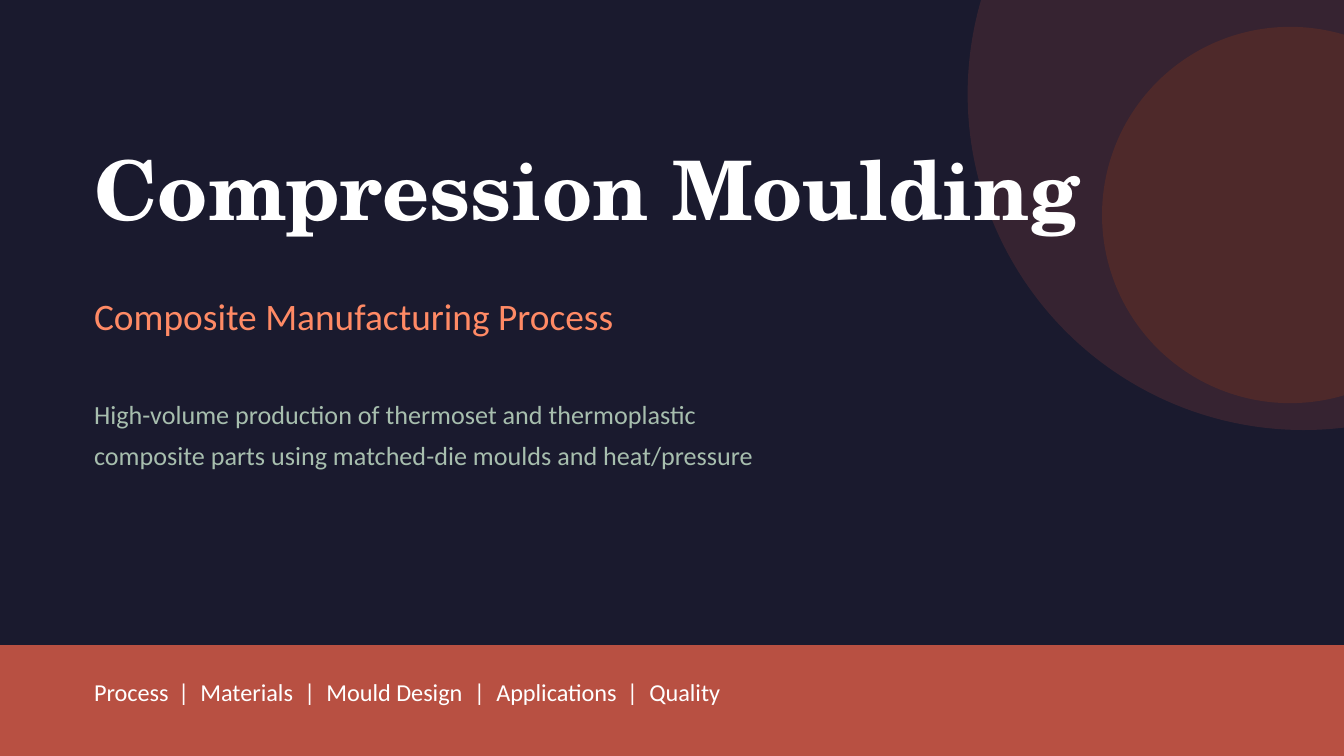
import dataclasses
import lxml.etree
import pptx
import pptx.dml.color
import pptx.enum.shapes
import pptx.enum.text
import pptx.oxml.ns
import pptx.util

Pt = pptx.util.Pt
Color = pptx.dml.color.RGBColor.from_string
Shape = pptx.enum.shapes.MSO_SHAPE
qn = pptx.oxml.ns.qn


@dataclasses.dataclass(frozen=True)
class Theme:
    night: str = "1A1A2E"
    clay: str = "B85042"
    ember: str = "E65100"
    coral: str = "FF8A65"
    sage: str = "A7BEAE"
    white: str = "FFFFFF"
    serif: str = "TeX Gyre Schola"
    sans: str = "Calibri"
    title: int = 44
    lead: int = 20
    body: int = 14
    foot: int = 13


class Deck:
    def __init__(self, theme, width, height):
        self.theme = theme
        self.file = pptx.Presentation()
        self.file.slide_width = Pt(width)
        self.file.slide_height = Pt(height)
        self.slide = self.file.slides.add_slide(self.file.slide_layouts[6])
        fill = self.slide.background.fill
        fill.solid()
        fill.fore_color.rgb = Color(theme.night)

    def shape(self, kind, box, color, alpha=100):
        item = self.slide.shapes.add_shape(kind, *map(Pt, box))
        item.shadow.inherit = False
        item.line.fill.background()
        item.fill.solid()
        item.fill.fore_color.rgb = Color(color)
        if alpha < 100:
            tint = item.fill._xPr.find(qn("a:solidFill"))[0]
            lxml.etree.SubElement(tint, qn("a:alpha"), val=str(alpha * 1000))

    def text(self, box, lines, size, color, face=None, bold=False, lead=None, tabs=()):
        frame = self.slide.shapes.add_textbox(*map(Pt, box)).text_frame
        frame.word_wrap = True
        frame.vertical_anchor = pptx.enum.text.MSO_ANCHOR.MIDDLE
        frame.margin_left = frame.margin_right = 0
        frame.margin_top = frame.margin_bottom = 0
        for rank, line in enumerate(lines):
            para = frame.add_paragraph() if rank else frame.paragraphs[0]
            para.text = line
            if lead:
                para.line_spacing = lead
            if tabs:
                stops = lxml.etree.SubElement(para._p.get_or_add_pPr(), qn("a:tabLst"))
                for stop in tabs:
                    lxml.etree.SubElement(stops, qn("a:tab"), pos=str(Pt(stop)), algn="l")
            font = para.font
            font.name = face or self.theme.sans
            font.size = Pt(size)
            font.bold = bold
            font.color.rgb = Color(color)


def main():
    theme = Theme()
    deck = Deck(theme, 720, 405)
    left = 50.4

    deck.shape(Shape.OVAL, (518.4, -129.6, 360, 360), theme.clay, 18)
    deck.shape(Shape.OVAL, (590.4, 14.4, 201.6, 201.6), theme.ember, 14)
    deck.shape(Shape.RECTANGLE, (0, 345.6, 720, 59.4), theme.clay)

    deck.text((left, 57.6, 540, 86.4), ["Compression Moulding"],
              theme.title, theme.white, theme.serif, bold=True)
    deck.text((left, 151.2, 504, 36), ["Composite Manufacturing Process"],
              theme.lead, theme.coral)
    deck.text((left, 201.6, 468, 57.6),
              ["High-volume production of thermoset and thermoplastic",
               "composite parts using matched-die moulds and heat/pressure"],
              theme.body, theme.sage, lead=1.3)

    topics = ["Process", "Materials", "Mould Design", "Applications", "Quality"]
    starts = [57, 124.5, 215.5, 297.5]
    tabs = [stop for start in starts for stop in (start - 12, start)]
    deck.text((left, 352.8, 619.2, 36), ["\t|\t".join(topics)],
              theme.foot, theme.white, tabs=tabs)

    deck.file.save("out.pptx")


if __name__ == "__main__":
    main()
